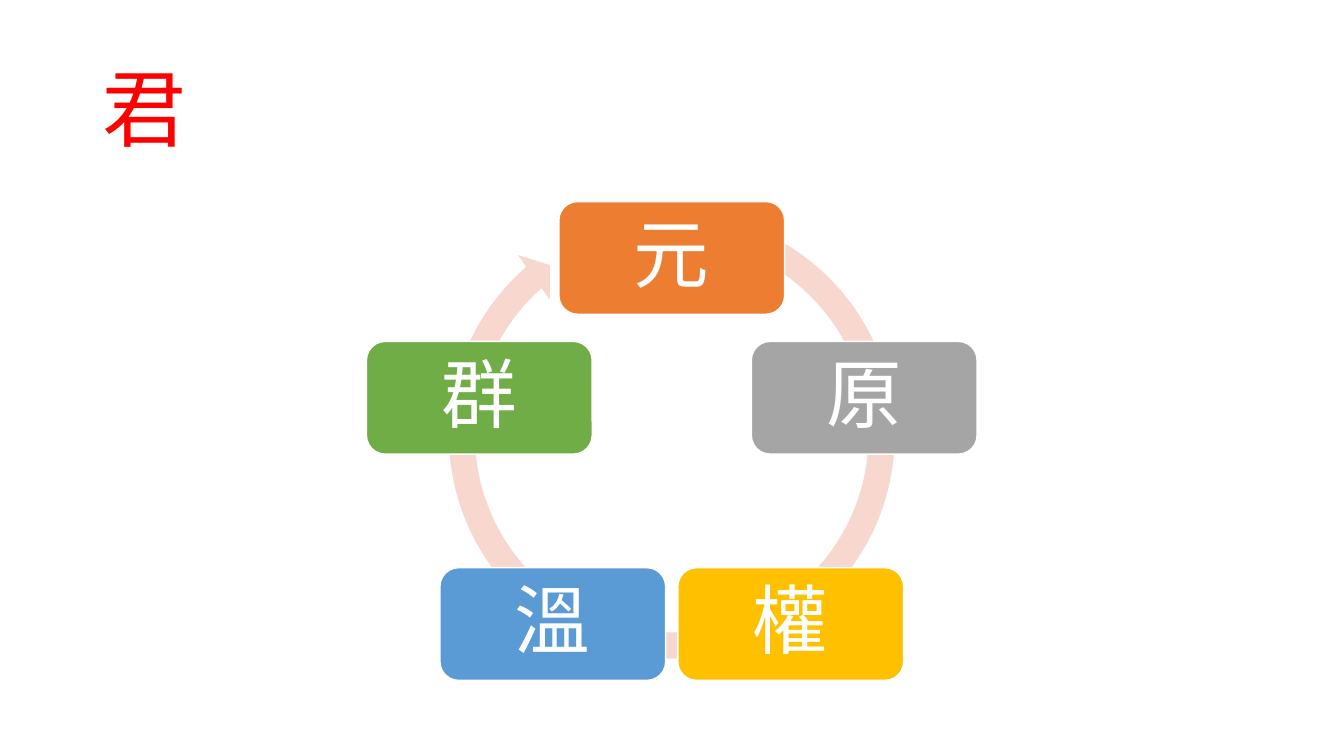
import math
from dataclasses import dataclass

from lxml import etree
from pptx import Presentation
from pptx import util as u
from pptx.dml.color import RGBColor
from pptx.enum import shapes, text
from pptx.oxml import ns

FONT = "Noto Sans CJK SC"
RED = RGBColor(0xFF, 0x00, 0x00)
WHITE = RGBColor(0xFF, 0xFF, 0xFF)
PINK = RGBColor(0xF8, 0xD7, 0xCE)
ORANGE = RGBColor(0xED, 0x7D, 0x31)
GREY = RGBColor(0xA5, 0xA5, 0xA5)
GOLD = RGBColor(0xFF, 0xC0, 0x00)
BLUE = RGBColor(0x5B, 0x9B, 0xD5)
GREEN = RGBColor(0x70, 0xAD, 0x47)

# Cycle geometry in centimetres
CENTER_X, CENTER_Y, RADIUS = 16.93, 11.6, 5.1
NODE_W, NODE_H = 5.69, 2.84
ARROW_SIZE = 11.96
ARROW_ADJUSTMENTS = (0.055, 3.307, 137.364, 174.101, 0.058)


@dataclass(frozen=True)
class Node:
    label: str
    color: RGBColor


# Clockwise from the top
NODES = [
    Node("元", ORANGE),
    Node("原", GREY),
    Node("權", GOLD),
    Node("溫", BLUE),
    Node("群", GREEN),
]


def write(tf, label: str, size: int, color: RGBColor, align, inset: float) -> None:
    tf.word_wrap = True
    tf.vertical_anchor = text.MSO_ANCHOR.MIDDLE
    tf.margin_left = tf.margin_right = u.Cm(inset)
    p = tf.paragraphs[0]
    p.text = label
    p.alignment = align
    p.line_spacing = 0.9
    p.font.size = u.Pt(size)
    p.font.color.rgb = color
    p.font.name = FONT
    # East Asian typeface follows the Latin one
    latin = p._p.pPr.find(ns.qn("a:defRPr")).find(ns.qn("a:latin"))
    ea = etree.Element(ns.qn("a:ea"), typeface=FONT)
    latin.addnext(ea)


def add_filled(slide, kind, x: float, y: float, w: float, h: float, color: RGBColor):
    """Add a flat shape centred on (x, y)."""
    sp = slide.shapes.add_shape(
        kind, u.Cm(x - w / 2), u.Cm(y - h / 2), u.Cm(w), u.Cm(h))
    sp.shadow.inherit = False
    sp.fill.solid()
    sp.fill.fore_color.rgb = color
    return sp


def add_arrow(slide) -> None:
    sp = add_filled(slide, shapes.MSO_SHAPE.CIRCULAR_ARROW, CENTER_X, 10.98,
                    ARROW_SIZE, ARROW_SIZE, PINK)
    sp.line.fill.background()
    for i, value in enumerate(ARROW_ADJUSTMENTS):
        sp.adjustments[i] = value


def add_node(slide, node: Node, angle: float) -> None:
    sp = add_filled(slide, shapes.MSO_SHAPE.ROUNDED_RECTANGLE,
                    CENTER_X + RADIUS * math.sin(angle),
                    CENTER_Y - RADIUS * math.cos(angle),
                    NODE_W, NODE_H, node.color)
    sp.line.color.rgb = WHITE
    sp.line.width = u.Pt(1)
    write(sp.text_frame, node.label, 54, WHITE, text.PP_ALIGN.CENTER, 0.58)


def main() -> None:
    prs = Presentation()
    prs.slide_width, prs.slide_height = u.Cm(33.87), u.Cm(19.05)
    s = prs.slides.add_slide(prs.slide_layouts[6])

    # Title
    title = s.shapes.add_textbox(u.Cm(2.33), u.Cm(1.01), u.Cm(29.21), u.Cm(3.68))
    write(title.text_frame, "君", 60, RED, text.PP_ALIGN.LEFT, 0.25)

    # Cycle
    add_arrow(s)
    for i, node in enumerate(NODES):
        add_node(s, node, math.tau * i / len(NODES))

    prs.save("out.pptx")


if __name__ == "__main__":
    main()
